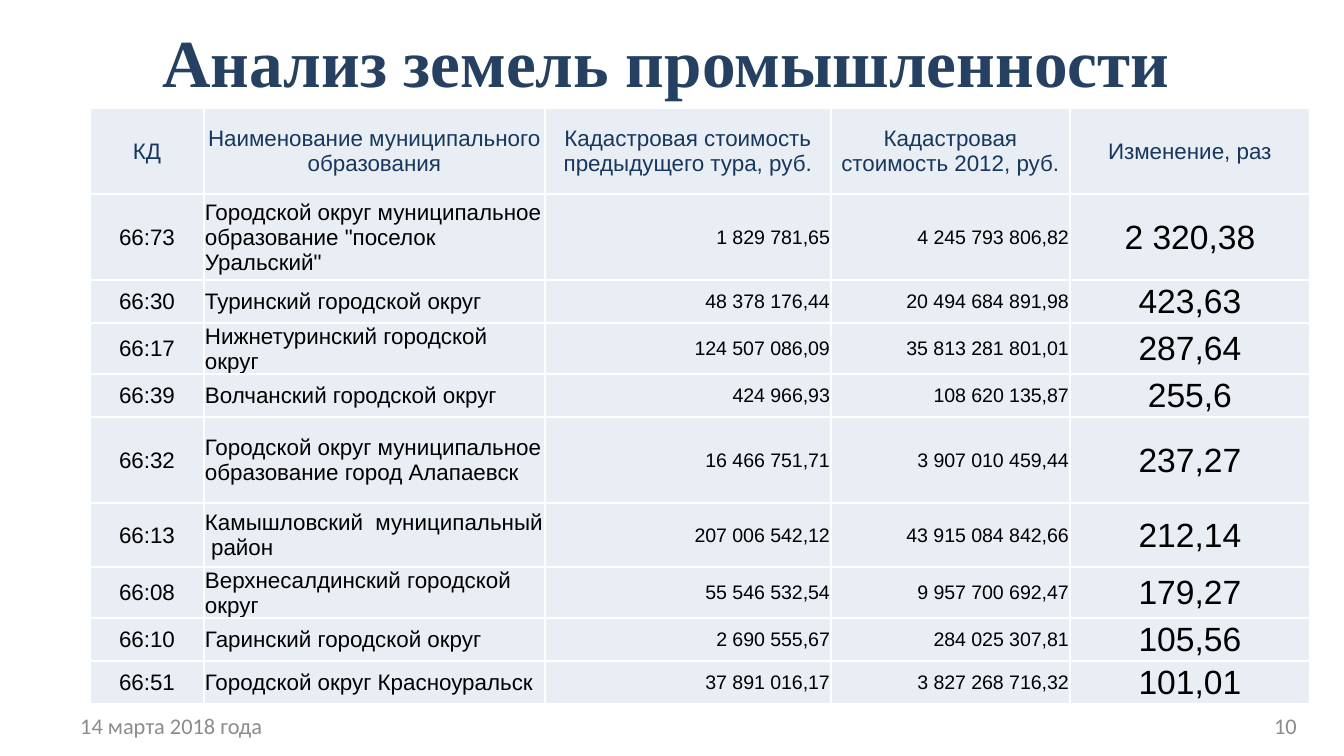
from lxml.etree import SubElement
from pptx import Presentation
from pptx.dml.color import RGBColor
from pptx.enum.text import MSO_ANCHOR as ANCHOR, PP_ALIGN as ALIGN
from pptx.oxml.ns import qn
from pptx.util import Emu, Pt

SLIDE_W, SLIDE_H = 1344, 756
PX = 9144000 / SLIDE_W

COL_WIDTHS = [114, 341, 286, 239, 240]
ROW_HEIGHTS = [86, 86, 43, 43, 43, 86, 64, 43, 43, 43]
HEADERS = [
    "КД",
    "Наименование муниципального образования",
    "Кадастровая стоимость предыдущего тура, руб.",
    "Кадастровая стоимость 2012, руб.",
    "Изменение, раз",
]
ROWS = [
    ("66:73", 'Городской округ муниципальное образование "поселок Уральский"',
     "1 829 781,65", "4 245 793 806,82", "2 320,38"),
    ("66:30", "Туринский городской округ",
     "48 378 176,44", "20 494 684 891,98", "423,63"),
    ("66:17", "Нижнетуринский городской округ",
     "124 507 086,09", "35 813 281 801,01", "287,64"),
    ("66:39", "Волчанский городской округ",
     "424 966,93", "108 620 135,87", "255,6"),
    ("66:32", "Городской округ муниципальное образование город Алапаевск",
     "16 466 751,71", "3 907 010 459,44", "237,27"),
    ("66:13", "Камышловский  муниципальный  район",
     "207 006 542,12", "43 915 084 842,66", "212,14"),
    ("66:08", "Верхнесалдинский городской округ",
     "55 546 532,54", "9 957 700 692,47", "179,27"),
    ("66:10", "Гаринский городской округ",
     "2 690 555,67", "284 025 307,81", "105,56"),
    ("66:51", "Городской округ Красноуральск",
     "37 891 016,17", "3 827 268 716,32", "101,01"),
]
COL_ALIGNS = [ALIGN.CENTER, ALIGN.LEFT, ALIGN.RIGHT, ALIGN.RIGHT, ALIGN.CENTER]
COL_SIZES = [12, 12, 10.5, 10.5, 18]


def px(n):
    return Emu(round(n * PX))


def rgb(value):
    return RGBColor.from_string(value)


def write(tf, text, size, font, color, align, bold=False):
    p = tf.paragraphs[0]
    p.alignment = align
    r = p.add_run()
    r.text = text
    r.font.size = Pt(size)
    r.font.name = font
    r.font.bold = bold
    r.font.color.rgb = rgb(color)


def add_title(s, text):
    title = s.shapes.title
    title.left, title.top, title.width, title.height = px(38), px(20), px(1273), px(82)
    tf = title.text_frame
    tf.vertical_anchor = ANCHOR.TOP
    tf.margin_top = tf.margin_bottom = 0
    write(tf, text, 36, "Times New Roman", "254061", ALIGN.CENTER, bold=True)


def add_footer(s, left, width, text, align):
    tf = s.shapes.add_textbox(px(left), px(711), px(width), px(30)).text_frame
    tf.word_wrap = True
    tf.vertical_anchor = ANCHOR.MIDDLE
    write(tf, text, 12, "Calibri", "8C8C8C", align)


def set_borders(cell, color, width):
    tc_pr = cell._tc.get_or_add_tcPr()
    for i, side in enumerate(("lnL", "lnR", "lnT", "lnB")):
        ln = SubElement(tc_pr, qn(f"a:{side}"), w=str(Pt(width)))
        SubElement(SubElement(ln, qn("a:solidFill")), qn("a:srgbClr"), val=color)
        # The schema wants border lines before the cell fill.
        tc_pr.insert(i, ln)


def fill_cell(cell, text, size, color, align):
    cell.fill.solid()
    cell.fill.fore_color.rgb = rgb("E9EDF4")
    set_borders(cell, "FFFFFF", 1)
    cell.vertical_anchor = ANCHOR.MIDDLE
    cell.margin_left = cell.margin_right = cell.margin_top = px(1)
    cell.margin_bottom = 0
    write(cell.text_frame, text, size, "Arial", color, align)


def add_value_table(s):
    table = s.shapes.add_table(
        len(ROW_HEIGHTS), len(COL_WIDTHS), px(90), px(108),
        px(sum(COL_WIDTHS)), px(sum(ROW_HEIGHTS))).table
    table.first_row = table.horz_banding = False
    for col, width in zip(table.columns, COL_WIDTHS):
        col.width = px(width)
    for row, height in zip(table.rows, ROW_HEIGHTS):
        row.height = px(height)
    for c, text in enumerate(HEADERS):
        fill_cell(table.cell(0, c), text, 12, "17375E", ALIGN.CENTER)
    for i, values in enumerate(ROWS, start=1):
        for c, text in enumerate(values):
            fill_cell(table.cell(i, c), text, COL_SIZES[c], "000000", COL_ALIGNS[c])


def main():
    prs = Presentation()
    prs.slide_width, prs.slide_height = px(SLIDE_W), px(SLIDE_H)
    s = prs.slides.add_slide(prs.slide_layouts[5])
    add_title(s, "Анализ земель промышленности ")
    add_value_table(s)
    add_footer(s, 67, 351, "14 марта 2018 года", ALIGN.LEFT)
    add_footer(s, 1169, 141, "10", ALIGN.RIGHT)
    prs.save("out.pptx")


if __name__ == "__main__":
    main()
